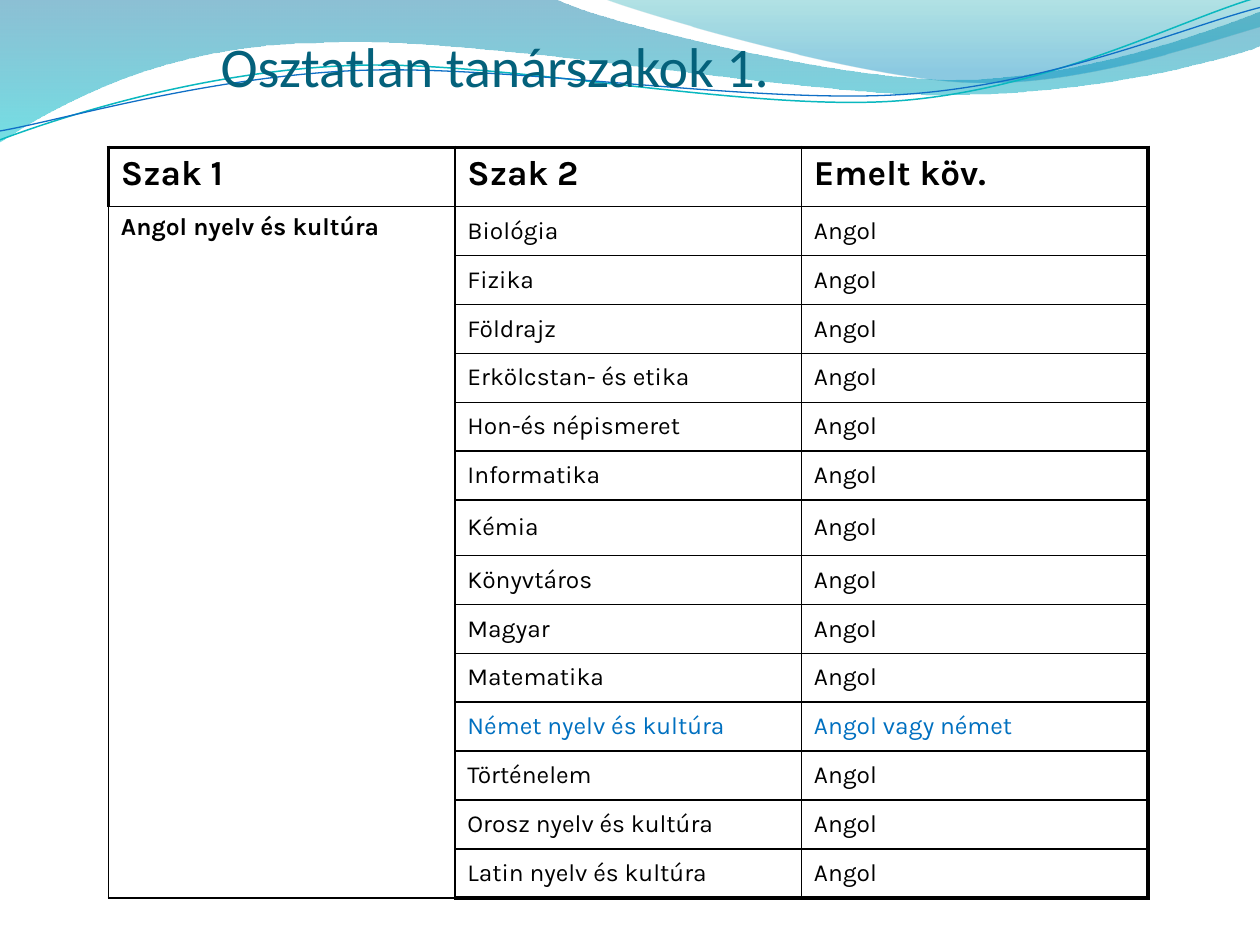
import math
from dataclasses import dataclass

from lxml import etree
from pptx import Presentation
from pptx import util as u
from pptx.dml import color
from pptx.enum import text
from pptx.oxml import ns


@dataclass(frozen=True)
class Theme:
    """Colours, fonts, type sizes and line widths of the slide."""
    title: str = "04617B"
    ink: str = "000000"
    accent: str = "0070C0"
    title_font: str = "Calibri"
    table_font: str = "Karla"
    title_size: int = 32
    header_size: int = 20
    body_size: int = 14
    thin: float = 1
    thick: float = 2.25


THEME = Theme()

BANDS = [
    ([(0, -0.01), (4.4, -0.01), (4.76, 0.17, 6.64, 0.63, 7.58, 0.63),
      (8.53, 0.63, 9.58, 0.26, 10, 0.09), (10.01, 0.36),
      (9.83, 0.44, 8.7, 0.76, 7.46, 0.75), (6.22, 0.75, 3.82, 0.28, 2.57, 0.34),
      (1.29, 0.35, 0.46, 0.83, -0.01, 1.13), (0, -0.01)],
     [(0, "0074A1", 45), (1, "00C6CF", 55)]),
    ([(4.79, -0.01), (5.09, 0.11, 6.82, 0.62, 7.69, 0.65),
      (8.56, 0.69, 9.61, 0.32, 10, 0.21), (10, 0), (4.79, -0.01)],
     [(0, "00A1A9", 30), (0.8, "008BBF", 45)]),
]
WAVE_TILT = -2.7
WAVES = [
    ([(0, 1.11), (0.48, 0.93, 1.58, 0.57, 2.77, 0.52),
      (3.95, 0.47, 5.93, 0.89, 7.13, 0.8), (8.33, 0.71, 9.38, 0.15, 9.98, -0.02)],
     (4.99, 0.58), "0AB8BF", 0.85),
    ([(0, 1.04), (0.47, 0.96, 1.64, 0.61, 2.83, 0.56),
      (4.03, 0.51, 5.97, 0.83, 7.17, 0.75), (8.36, 0.67, 9.41, 0.21, 10, 0.06)],
     (5, 0.59), "0F6FC6", 0.75),
]

HEADERS = ["Szak 1", "Szak 2", "Emelt köv."]
MAJOR = "Angol nyelv és kultúra"
REQUIREMENT = "Angol"
SPECIAL_REQUIREMENTS = {"Német nyelv és kultúra": "Angol vagy német"}
SECOND_MAJORS = [
    "Biológia", "Fizika", "Földrajz", "Erkölcstan- és etika", "Hon-és népismeret",
    "Informatika", "Kémia", "Könyvtáros", "Magyar", "Matematika",
    "Német nyelv és kultúra", "Történelem", "Orosz nyelv és kultúra",
    "Latin nyelv és kultúra",
]
TABLE_HEIGHT = 5.96
TALL_ROWS = {"Szak 2": 0.47, "Kémia": 0.44}


def write_text(frame, content, *, size, font, ink, bold=False, space=0):
    """Write one left-aligned paragraph with its format and space before in percent."""
    paragraph = frame.paragraphs[0]
    paragraph.alignment = text.PP_ALIGN.LEFT
    before = etree.SubElement(paragraph._p.get_or_add_pPr(), ns.qn("a:spcBef"))
    etree.SubElement(before, ns.qn("a:spcPct"), val=str(space * 1000))
    run = paragraph.add_run()
    run.text = content
    run.font.size = u.Pt(size)
    run.font.name = font
    run.font.bold = bold
    run.font.color.rgb = color.RGBColor.from_string(ink)


def pair_up(segment):
    """Split a flat segment into its points."""
    return list(zip(segment[::2], segment[1::2]))


def turn(segments, center, degrees):
    """Turn a path clockwise about a center."""
    cosine, sine = math.cos(math.radians(degrees)), math.sin(math.radians(degrees))
    turned = []
    for segment in segments:
        offsets = [(x - center[0], y - center[1]) for x, y in pair_up(segment)]
        turned.append([value for x, y in offsets
                       for value in (center[0] + x * cosine - y * sine,
                                     center[1] + x * sine + y * cosine)])
    return turned


def add_outline(slide, segments, close):
    """Add a freeform of lines and cubic curves."""
    points = [(u.Inches(x), u.Inches(y)) for segment in segments for x, y in pair_up(segment)]
    builder = slide.shapes.build_freeform(*points[0])
    builder.add_line_segments(points[1:], close=close)
    shape = builder.convert_to_shape()
    shape.shadow.inherit = False
    steps = iter(shape.element.spPr.findall(".//" + ns.qn("a:lnTo")))
    for segment in segments[1:]:
        group = [next(steps) for _ in pair_up(segment)]
        if len(group) == 3:
            curve = etree.Element(ns.qn("a:cubicBezTo"))
            group[0].addprevious(curve)
            for step in group:
                curve.append(step[0])
                step.getparent().remove(step)
    return shape


def add_band(slide, segments, stops):
    """Add a closed band with a translucent downward gradient."""
    shape = add_outline(slide, segments, close=True)
    shape.line.fill.background()
    shape.fill.gradient()
    shape.fill.gradient_angle = 270
    for stop, (position, shade, _) in zip(shape.fill.gradient_stops, stops):
        stop.position = position
        stop.color.rgb = color.RGBColor.from_string(shade)
    shades = shape.element.spPr.findall(".//" + ns.qn("a:srgbClr"))
    for shade, (_, _, opacity) in zip(shades, stops):
        etree.SubElement(shade, ns.qn("a:alpha"), val=str(opacity * 1000))


def add_wave(slide, segments, center, ink, width):
    """Add an open curved line, tilted as a whole."""
    shape = add_outline(slide, turn(segments, center, -WAVE_TILT), close=False)
    shape.rotation = WAVE_TILT
    shape.fill.background()
    shape.line.color.rgb = color.RGBColor.from_string(ink)
    shape.line.width = u.Pt(width)


def add_title(slide, content):
    """Place the title above the waves and fill it."""
    title = slide.shapes.title
    slide.shapes.element.append(title.element)
    title.left, title.top = u.Inches(1.75), u.Inches(0.21)
    title.width, title.height = u.Inches(8.25), u.Inches(0.57)
    frame = title.text_frame
    frame.word_wrap = True
    frame.auto_size = text.MSO_AUTO_SIZE.NONE
    frame.vertical_anchor = text.MSO_ANCHOR.BOTTOM
    frame.margin_left = frame.margin_right = frame.margin_bottom = 0
    frame.margin_top = u.Inches(0.05)
    write_text(frame, content, size=THEME.title_size, font=THEME.title_font, ink=THEME.title)


def set_borders(cell, thick_sides):
    """Draw the four cell borders, thick on the named sides."""
    properties = cell._tc.get_or_add_tcPr()
    for side in "LRTB":
        width = THEME.thick if side in thick_sides else THEME.thin
        line = etree.SubElement(properties, ns.qn("a:ln" + side), w=str(u.Pt(width)))
        fill = etree.SubElement(line, ns.qn("a:solidFill"))
        etree.SubElement(fill, ns.qn("a:srgbClr"), val=THEME.ink)


def outer_sides(row, column, last_row):
    """Name the sides of a cell that lie on the thick frame."""
    on_frame = {"L": row == 0 and column == 0, "R": column == 2,
                "T": row == 0, "B": row == last_row and column > 0}
    return {side for side, thick in on_frame.items() if thick}


def add_majors_table(slide):
    """Add the table of subject pairs and their requirements."""
    rows = [HEADERS] + [["", major, SPECIAL_REQUIREMENTS.get(major, REQUIREMENT)]
                        for major in SECOND_MAJORS]
    rows[1][0] = MAJOR
    common = (TABLE_HEIGHT - sum(TALL_ROWS.values())) / (len(rows) - len(TALL_ROWS))
    table = slide.shapes.add_table(len(rows), 3, u.Inches(0.86), u.Inches(1.17),
                                   u.Inches(8.25), u.Inches(TABLE_HEIGHT)).table
    table.first_row = table.horz_banding = False
    for r, row in enumerate(rows):
        table.rows[r].height = u.Inches(TALL_ROWS.get(row[1], common))
        size = THEME.header_size if r == 0 else THEME.body_size
        ink = THEME.accent if row[1] in SPECIAL_REQUIREMENTS else THEME.ink
        for c, content in enumerate(row):
            cell = table.cell(r, c)
            set_borders(cell, outer_sides(r, c, len(rows) - 1))
            cell.fill.background()
            heading = r == 0 or c == 0
            cell.vertical_anchor = text.MSO_ANCHOR.TOP if heading else text.MSO_ANCHOR.MIDDLE
            if content:
                write_text(cell.text_frame, content, size=size, font=THEME.table_font,
                           ink=ink, bold=heading, space=20)
    table.cell(1, 0).merge(table.cell(len(rows) - 1, 0))


def main():
    """Build the slide and save it."""
    presentation = Presentation()
    presentation.slide_width, presentation.slide_height = u.Inches(10), u.Inches(7.5)
    slide = presentation.slides.add_slide(presentation.slide_layouts[5])
    for band in BANDS:
        add_band(slide, *band)
    for wave in WAVES:
        add_wave(slide, *wave)
    add_title(slide, "Osztatlan tanárszakok 1.")
    add_majors_table(slide)
    presentation.save("out.pptx")


if __name__ == "__main__":
    main()
